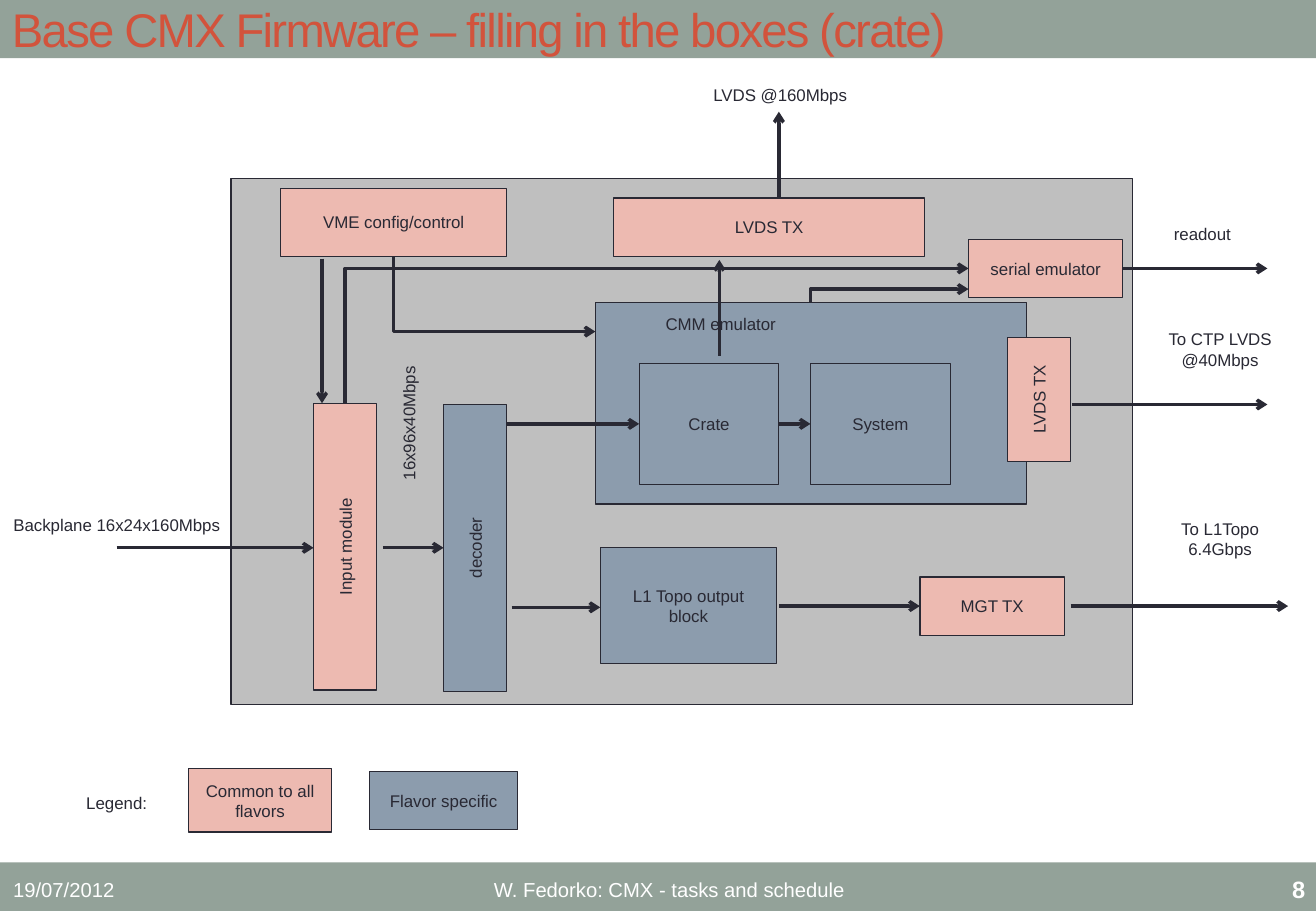
from lxml import etree
from pptx import Presentation
from pptx.dml.color import RGBColor
from pptx.enum import shapes, text
from pptx.oxml import ns
from pptx.util import Inches, Pt

SAGE = RGBColor(0x93, 0xA2, 0x99)
RED = RGBColor(0xD2, 0x53, 0x3C)
WHITE = RGBColor(0xFF, 0xFF, 0xFF)
INK = RGBColor(0x29, 0x29, 0x34)
GREY = RGBColor(0xBF, 0xBF, 0xBF)
PINK = RGBColor(0xED, 0xBA, 0xB1)
BLUE = RGBColor(0x8C, 0x9C, 0xAD)

LEFT, MID, RIGHT = text.PP_ALIGN.LEFT, text.PP_ALIGN.CENTER, text.PP_ALIGN.RIGHT

deck = Presentation()
deck.slide_width, deck.slide_height = Inches(10.83), Inches(7.5)
slide = deck.slides.add_slide(deck.slide_layouts[6])
items = slide.shapes


def write(frame, words, size=10, color=INK, align=MID, bold=False):
    frame.word_wrap = True
    frame.vertical_anchor = text.MSO_ANCHOR.MIDDLE
    frame.text = words
    for para in frame.paragraphs:
        para.alignment = align
        font = para.font
        font.name, font.size, font.bold = "Arial", Pt(size), bold
        font.color.rgb = color


def draw(line):
    line.line.color.rgb = INK
    line.line.width = Pt(2)
    edge = line.line._get_or_add_ln()
    etree.SubElement(edge, ns.qn("a:tailEnd"), type="arrow")


for top, high in [(7.1, 0.4), (0, 0.48)]:
    band = items.add_shape(shapes.MSO_SHAPE.RECTANGLE, 0, Inches(top), deck.slide_width, Inches(high))
    band.shadow.inherit = False
    band.fill.solid()
    band.fill.fore_color.rgb = SAGE
    band.line.fill.background()

for words, spot, size, color, align, bold in [
    ("Base CMX Firmware – filling in the boxes (crate)", (0, 0.01, 9.75, 0.46), 28, RED, LEFT, False),
    ("19/07/2012", (0.01, 7.14, 1.06, 0.36), 12, WHITE, LEFT, False),
    ("W. Fedorko: CMX - tasks and schedule", (1.07, 7.14, 8.88, 0.36), 12, WHITE, MID, False),
    ("8", (9.95, 7.14, 0.89, 0.36), 14, WHITE, RIGHT, True),
]:
    label = items.add_textbox(*map(Inches, spot))
    write(label.text_frame, words, size, color, align, bold)
    if size == 28:
        run = label.text_frame.paragraphs[0].runs[0]
        run._r.get_or_add_rPr().set("spc", "-100")

box = {}
for key, words, spot, color, turn in [
    ("board", "", (1.9, 1.47, 7.42, 4.33), GREY, 0),
    ("input", "Input module", (1.66, 4.24, 2.36, 0.52), PINK, 270),
    ("decoder", "decoder", (2.73, 4.25, 2.36, 0.52), BLUE, 270),
    ("lvds", "LVDS TX", (5.05, 1.63, 2.56, 0.48), PINK, 0),
    ("mgt", "MGT TX", (7.57, 4.75, 1.19, 0.48), PINK, 0),
    ("topo", "L1 Topo output block", (4.94, 4.51, 1.45, 0.95), BLUE, 0),
    ("cmm", "", (4.9, 2.49, 3.55, 1.66), BLUE, 0),
    ("crate", "Crate", (5.26, 2.99, 1.15, 1), BLUE, 0),
    ("system", "System", (6.67, 2.99, 1.15, 1), BLUE, 0),
    ("serial", "serial emulator", (7.97, 1.97, 1.27, 0.48), PINK, 0),
    ("ctp", "LVDS TX", (8.04, 3.03, 1.02, 0.52), PINK, 270),
    ("vme", "VME config/control", (2.31, 1.55, 1.86, 0.56), PINK, 0),
    ("common", "Common to all flavors", (1.55, 6.33, 1.18, 0.52), PINK, 0),
    ("flavor", "Flavor specific", (3.04, 6.35, 1.22, 0.48), BLUE, 0),
]:
    rect = box[key] = items.add_shape(shapes.MSO_SHAPE.RECTANGLE, *map(Inches, spot))
    rect.rotation = turn
    rect.shadow.inherit = False
    rect.fill.solid()
    rect.fill.fore_color.rgb = color
    rect.line.color.rgb = INK
    rect.line.width = Pt(0.75)
    if words:
        write(rect.text_frame, words)

for words, spot, wrap, turn in [
    ("CMM emulator", (5.37, 2.53, 1.12, 0.27), False, 0),
    ("LVDS @160Mbps", (5.76, 0.65, 1.32, 0.27), False, 0),
    ("Backplane 16x24x160Mbps", (-0.14, 4.19, 2.2, 0.27), True, 0),
    ("To CTP LVDS @40Mbps", (9.23, 2.66, 1.62, 0.44), True, 0),
    ("To L1Topo\n6.4Gbps", (9.23, 4.22, 1.62, 0.44), True, 0),
    ("16x96x40Mbps", (2.35, 3.35, 2.03, 0.27), True, 270),
    ("readout", (9.56, 1.79, 0.67, 0.27), False, 0),
    ("Legend:", (0.61, 6.48, 0.7, 0.27), False, 0),
]:
    label = items.add_textbox(*map(Inches, spot))
    label.rotation = turn
    write(label.text_frame, words)
    label.text_frame.word_wrap = wrap
    label.text_frame.vertical_anchor = text.MSO_ANCHOR.TOP
    label.text_frame.auto_size = text.MSO_AUTO_SIZE.SHAPE_TO_FIT_TEXT

for ends, start, stop in [
    ((6.41, 1.63, 6.41, 0.92), None, None),
    ((0.96, 4.51, 2.58, 4.51), None, ("input", 0)),
    ((3.15, 4.51, 3.65, 4.51), None, ("decoder", 0)),
    ((8.82, 3.33, 10.43, 3.33), None, None),
    ((8.81, 4.99, 10.6, 4.99), None, None),
    ((6.41, 4.99, 7.57, 4.99), None, ("mgt", 1)),
    ((4.17, 3.49, 5.26, 3.49), None, ("crate", 1)),
    ((4.21, 5, 4.94, 5), None, ("topo", 1)),
    ((5.92, 2.93, 5.92, 2.14), None, None),
    ((6.41, 3.49, 6.67, 3.49), ("crate", 3), ("system", 1)),
    ((9.24, 2.21, 10.43, 2.21), ("serial", 3), None),
    ((2.65, 2.13, 2.65, 3.32), None, None),
]:
    ends = [Inches(n) for n in ends]
    wire = items.add_connector(shapes.MSO_CONNECTOR.STRAIGHT, *ends)
    if start:
        wire.begin_connect(box[start[0]], start[1])
    if stop:
        wire.end_connect(box[stop[0]], stop[1])
    wire.begin_x, wire.begin_y, wire.end_x, wire.end_y = ends
    draw(wire)
    etree.SubElement(wire._element.spPr, ns.qn("a:effectLst"))

for first, *rest in [
    [(2.84, 3.32), (2.84, 2.21), (7.97, 2.21)],
    [(6.67, 2.49), (6.67, 2.38), (7.97, 2.38)],
    [(3.24, 2.11), (3.24, 2.73), (4.9, 2.73)],
]:
    pen = items.build_freeform(*map(Inches, first))
    pen.add_line_segments([(Inches(x), Inches(y)) for x, y in rest], close=False)
    elbow = pen.convert_to_shape()
    elbow.shadow.inherit = False
    elbow.fill.background()
    draw(elbow)

deck.save("out.pptx")
